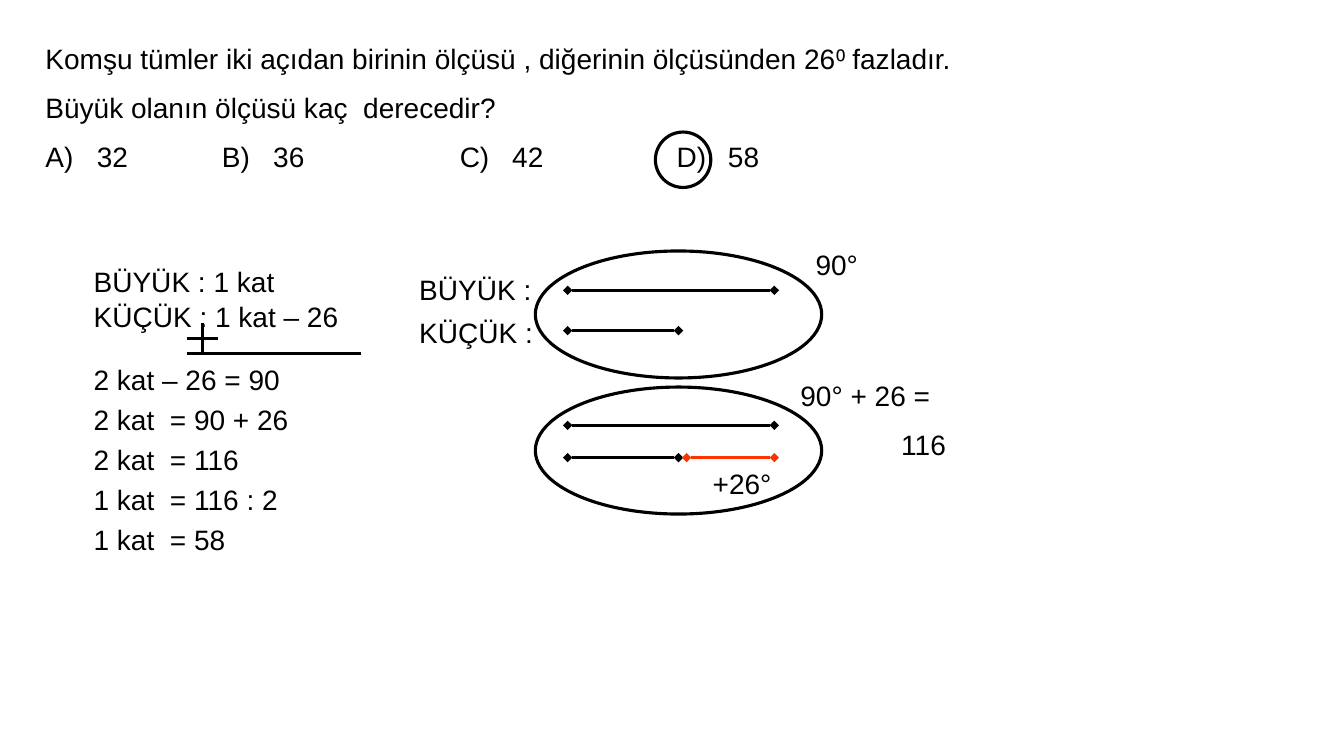
from lxml.etree import SubElement
from pptx import Presentation
from pptx.dml.color import RGBColor
from pptx.enum.shapes import MSO_CONNECTOR as Connector, MSO_SHAPE as Shape
from pptx.enum.text import MSO_ANCHOR as Anchor, PP_ALIGN as Align
from pptx.oxml.ns import qn
from pptx.util import Inches, Pt

BLACK = RGBColor(0x00, 0x00, 0x00)
RED = RGBColor(0xFF, 0x33, 0x00)
LINE_WIDTH = Pt(2.25)
FONT = {"name": "Arial", "size": Pt(20), "bold": False}
FRAME = {
    "word_wrap": True,
    "vertical_anchor": Anchor.TOP,
    "margin_left": Inches(0.1),
    "margin_right": Inches(0.1),
    "margin_top": Inches(0.05),
    "margin_bottom": Inches(0.05),
}
OPTION_TABS = (0.51, 1.75, 2.26, 4.11, 4.63, 6.26, 6.77)
STEPS = (
    "2 kat – 26 = 90",
    "2 kat  = 90 + 26",
    "2 kat  = 116",
    "1 kat  = 116 : 2",
    "1 kat  = 58",
)


def apply_format(target, values):
    for name, value in values.items():
        setattr(target, name, value)


def fill_text(shape, lines):
    frame = shape.text_frame
    apply_format(frame, FRAME)
    for index, line in enumerate(lines):
        paragraph = frame.paragraphs[0] if index == 0 else frame.add_paragraph()
        run = paragraph.add_run()
        run.text = line
        apply_format(run.font, FONT)
        run.font.color.rgb = BLACK
        paragraph.alignment = Align.LEFT
        paragraph.space_before = Pt(11 if index else 0)
    return frame.paragraphs


def add_text(slide, left, top, width, *lines, height=0.43):
    box = slide.shapes.add_textbox(*map(Inches, (left, top, width, height)))
    return fill_text(box, lines)


def add_line(slide, start, end, color=BLACK, diamonds=False):
    connector = slide.shapes.add_connector(
        Connector.STRAIGHT, *map(Inches, (*start, *end))
    )
    connector.line.color.rgb = color
    connector.line.width = LINE_WIDTH
    properties = connector._element.spPr
    if diamonds:
        for tag in ("a:headEnd", "a:tailEnd"):
            SubElement(properties.find(qn("a:ln")), qn(tag), type="diamond")
    SubElement(properties, qn("a:effectLst"))


def add_segment(slide, left, right, height, color=BLACK):
    add_line(slide, (left, height), (right, height), color, diamonds=True)


def add_ring(slide, left, top, width, height):
    ring = slide.shapes.add_shape(
        Shape.OVAL, *map(Inches, (left, top, width, height))
    )
    ring.shadow.inherit = False
    ring.fill.background()
    ring.line.color.rgb = BLACK
    ring.line.width = LINE_WIDTH


def add_question(slide, left, top, width, height):
    title = slide.shapes.title
    apply_format(title, {
        "left": Inches(left),
        "top": Inches(top),
        "width": Inches(width),
        "height": Inches(height),
    })
    paragraphs = fill_text(title, (
        "Komşu tümler iki açıdan birinin ölçüsü , diğerinin ölçüsünden 26⁰ fazladır.",
        "Büyük olanın ölçüsü kaç  derecedir?",
        "A)\t32\tB)\t36\tC)\t42\tD)\t58",
    ))
    tabs = SubElement(paragraphs[2]._p.get_or_add_pPr(), qn("a:tabLst"))
    for position in OPTION_TABS:
        SubElement(tabs, qn("a:tab"), pos=str(Inches(position)), algn="l")
    add_ring(slide, left + 6.15, top + 0.95, 0.55, 0.55)


def add_solution(slide, left, top, width):
    add_text(slide, left, top, width, "BÜYÜK : 1 kat")
    add_text(slide, left, top + 0.35, width, "KÜÇÜK : 1 kat – 26")
    sum_left, sum_top = left + 1.02, top + 0.94
    add_line(slide, (sum_left, sum_top), (sum_left + 1.73, sum_top))
    add_line(slide, (sum_left, sum_top - 0.15), (sum_left + 0.31, sum_top - 0.15))
    add_line(slide, (sum_left + 0.16, sum_top - 0.31), (sum_left + 0.16, sum_top))
    for index, step in enumerate(STEPS):
        add_text(slide, left, top + 0.98 + index * 0.395, width, step)


def add_diagram(slide, left, top, width, height):
    start, middle, end = left + 0.32, left + 1.42, left + 2.37
    lower_top = top + 1.35
    for index, name in enumerate(("BÜYÜK :", "KÜÇÜK :")):
        add_text(slide, left - 1.25, top + 0.16 + index * 0.43, 1.5, name)
    for ring_top, long_offset, short_offset in (
        (top, 0.39, 0.79),
        (lower_top, 0.38, 0.7),
    ):
        add_ring(slide, left, ring_top, width, height)
        add_segment(slide, start, end, ring_top + long_offset)
        add_segment(slide, start, middle, ring_top + short_offset)
    add_segment(slide, middle + 0.08, end, lower_top + 0.7, RED)
    add_text(slide, left + 1.66, lower_top + 0.74, 0.79, "+26°")
    add_text(slide, left + 2.68, top - 0.08, 0.79, "90°")
    total = add_text(
        slide, left + 2.53, lower_top - 0.13, 1.89, "90° + 26 =", "116", height=0.93
    )
    total[1]._p.get_or_add_pPr().set("marL", str(Inches(1)))


def main():
    presentation = Presentation()
    presentation.slide_width = Inches(13.33)
    presentation.slide_height = Inches(7.5)
    slide = presentation.slides.add_slide(presentation.slide_layouts[5])
    add_question(slide, 0.35, 0.36, 9.37, 1.43)
    add_solution(slide, 0.83, 2.57, 2.99)
    add_diagram(slide, 5.31, 2.49, 2.84, 1.26)
    presentation.save("out.pptx")


if __name__ == "__main__":
    main()
